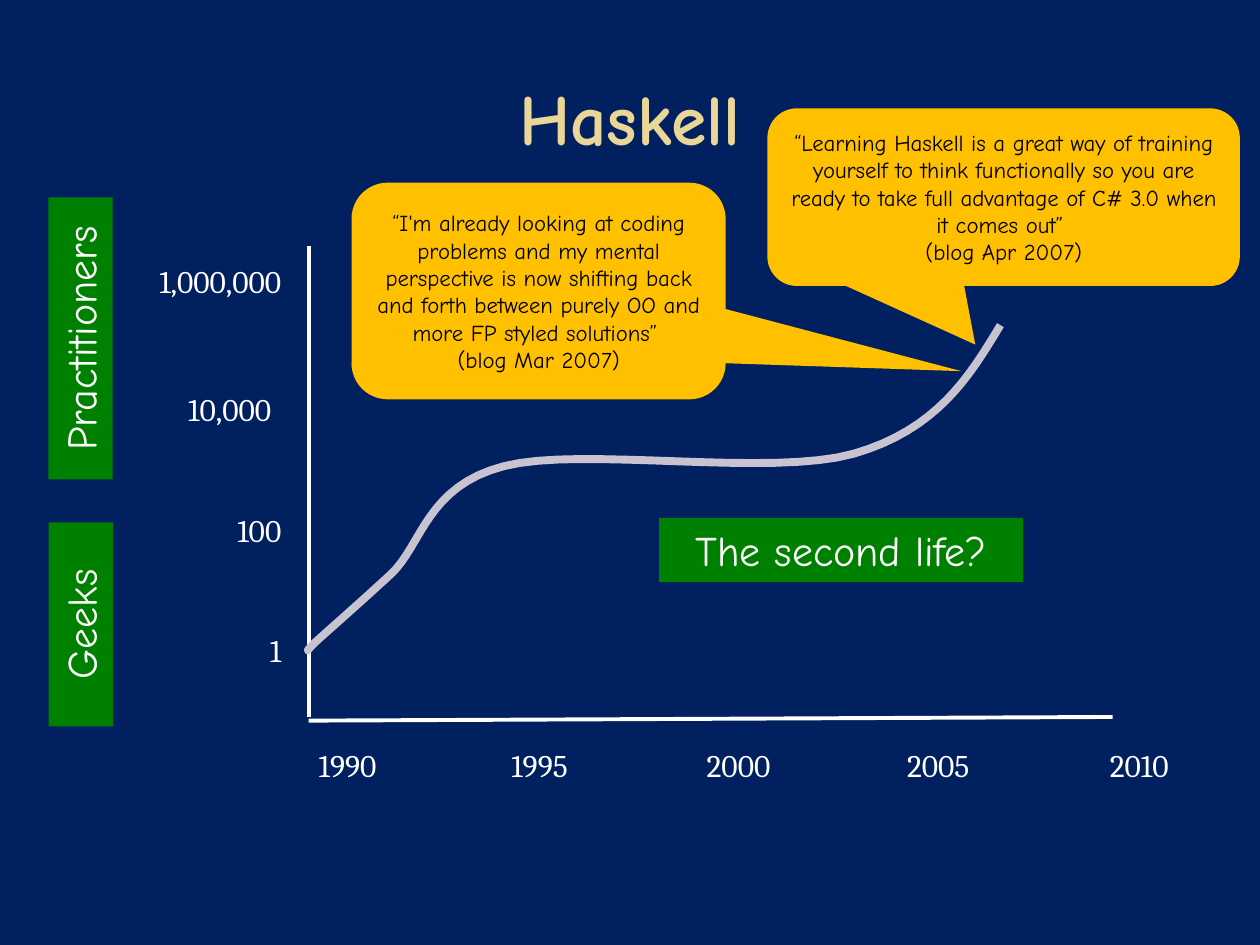
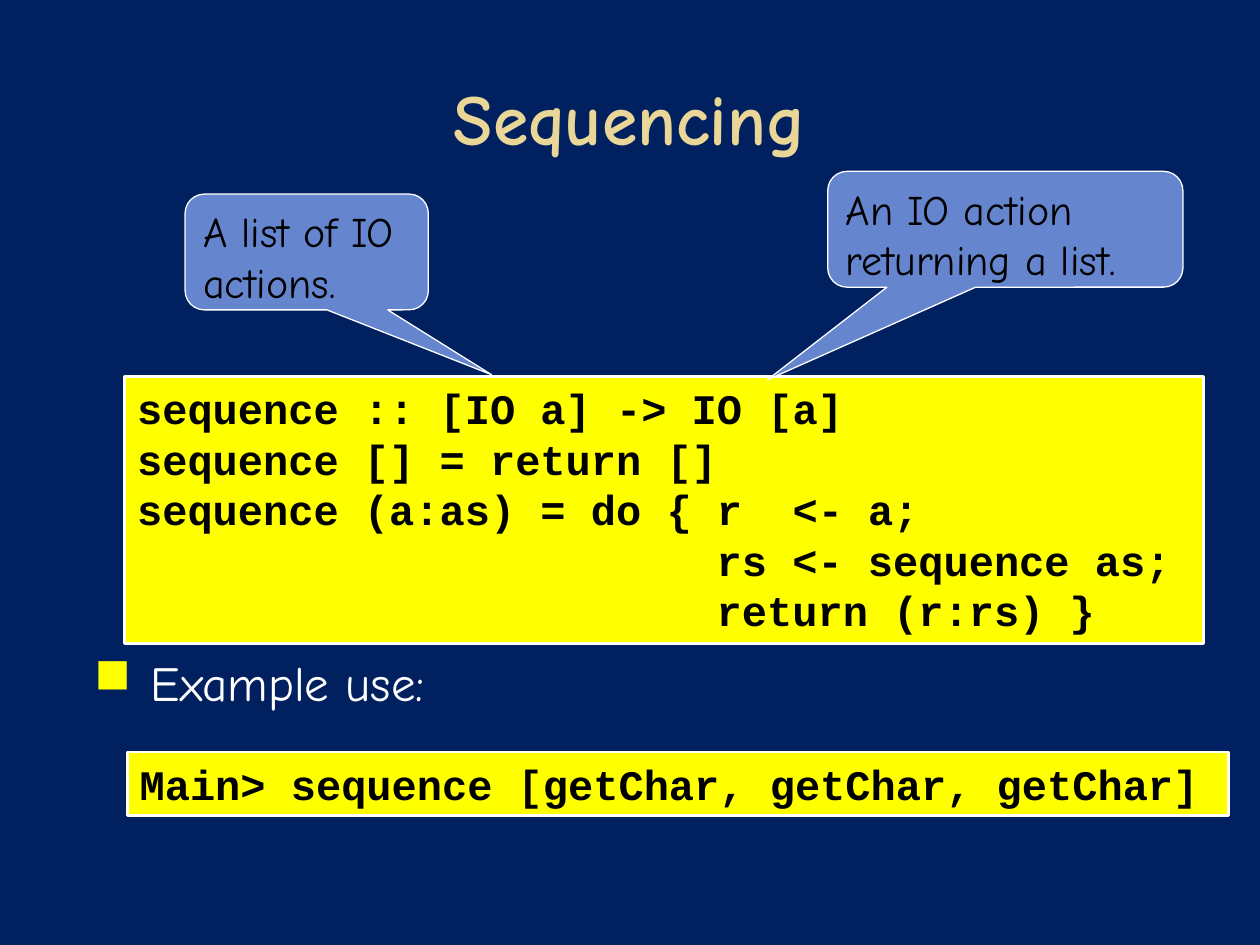
from lxml import etree
from pptx import Presentation
from pptx.dml.color import RGBColor
from pptx.enum.shapes import MSO_CONNECTOR as Connector, MSO_SHAPE as Shape
from pptx.enum.text import MSO_ANCHOR as Anchor, PP_ALIGN as Align
from pptx.oxml.ns import qn
from pptx.util import Pt

NAVY, SAND, WHITE, BLACK = "002060", "EAD696", "FFFFFF", "000000"
GREEN, AMBER, YELLOW = "008000", "FFC000", "FFFF00"
BLUE, LILAC = "6585CF", "C9C2D1"
HAND, SERIF, MONO = "Comic Neue", "Cambria", "Courier New"


def color(value):
    return RGBColor.from_string(value)


def bezier(start, first, second, end, steps=16):
    """Return the points after start on a cubic curve."""
    points = []
    for step in range(1, steps + 1):
        t = step / steps
        weights = ((1 - t) ** 3, 3 * t * (1 - t) ** 2, 3 * t * t * (1 - t), t ** 3)
        corners = (start, first, second, end)
        points.append(tuple(sum(w * c[axis] for w, c in zip(weights, corners))
                            for axis in (0, 1)))
    return points


class Painter:
    """Hold the shared style and the slide being drawn; lengths are in points."""

    def __init__(self):
        self.deck = Presentation()
        self.deck.slide_width, self.deck.slide_height = Pt(720), Pt(540)
        self.slide = None

    def new_slide(self, title):
        self.slide = self.deck.slides.add_slide(self.deck.slide_layouts[6])
        fill = self.slide.background.fill
        fill.solid()
        fill.fore_color.rgb = color(NAVY)
        self.text(36, 21.6, 648, 90, title, size=41, ink=SAND, bold=True,
                  align=Align.CENTER, anchor=Anchor.MIDDLE)

    def set_text(self, shape, lines, size, font=HAND, ink=WHITE, bold=False,
                 align=Align.LEFT, anchor=Anchor.TOP):
        frame = shape.text_frame
        frame.word_wrap = True
        frame.vertical_anchor = anchor
        for index, line in enumerate([lines] if isinstance(lines, str) else lines):
            para = frame.add_paragraph() if index else frame.paragraphs[0]
            para.text = line
            para.alignment = align
            para.font.name, para.font.size, para.font.bold = font, Pt(size), bold
            para.font.color.rgb = color(ink)
        return frame.paragraphs

    def text(self, left, top, width, height, lines, **style):
        box = self.slide.shapes.add_textbox(Pt(left), Pt(top), Pt(width), Pt(height))
        return self.set_text(box, lines, **style)

    def shape(self, kind, left, top, width, height, fill, line=None, line_width=1.5):
        shape = self.slide.shapes.add_shape(kind, Pt(left), Pt(top), Pt(width), Pt(height))
        shape.shadow.inherit = False
        shape.fill.solid()
        shape.fill.fore_color.rgb = color(fill)
        if line:
            shape.line.color.rgb = color(line)
            shape.line.width = Pt(line_width)
        else:
            shape.line.fill.background()
        return shape

    def label(self, left, top, width, text, rotation=0):
        box = self.shape(Shape.RECTANGLE, left, top, width, 36.7, GREEN)
        box.rotation = rotation
        self.set_text(box, text, size=24, align=Align.CENTER)

    def callout(self, left, top, width, height, tip, text, fill, line=None, **style):
        """Draw a speech bubble; tip is its offset from the centre as shares of the size."""
        bubble = self.shape(Shape.ROUNDED_RECTANGULAR_CALLOUT, left, top, width, height,
                            fill, line, 0.75)
        bubble.adjustments[0], bubble.adjustments[1] = tip
        self.set_text(bubble, text, ink=BLACK, **style)

    def code(self, left, top, width, height, lines):
        box = self.shape(Shape.RECTANGLE, left, top, width, height, YELLOW, WHITE)
        return self.set_text(box, lines, size=24, font=MONO, ink=BLACK, bold=True)

    def bullet(self, left, top, width, height, text):
        para = self.text(left, top, width, height, text, size=28)[0]
        props = para._p.get_or_add_pPr()
        self.indent(para, 43.2, -32.4)
        tint = etree.SubElement(props, qn("a:buClr"))
        etree.SubElement(tint, qn("a:srgbClr"), val=YELLOW)
        etree.SubElement(props, qn("a:buChar"), char="■")
        # Bullet properties come before the default run properties.
        props.append(props.find(qn("a:defRPr")))

    def indent(self, para, margin, first=0):
        props = para._p.get_or_add_pPr()
        props.set("marL", str(Pt(margin)))
        props.set("indent", str(Pt(first)))

    def axis(self, x1, y1, x2, y2):
        line = self.slide.shapes.add_connector(Connector.STRAIGHT, Pt(x1), Pt(y1), Pt(x2), Pt(y2))
        line.line.color.rgb = color(WHITE)
        line.line.width = Pt(2.25)
        etree.SubElement(line._element.spPr, qn("a:effectLst"))

    def curve(self, start, segments):
        points = [start]
        for segment in segments:
            points += bezier(points[-1], *segment)
        (x, y), *rest = [(Pt(px), Pt(py)) for px, py in points]
        builder = self.slide.shapes.build_freeform(x, y)
        builder.add_line_segments(rest, close=False)
        shape = builder.convert_to_shape()
        shape.shadow.inherit = False
        shape.fill.background()
        shape.line.color.rgb = color(LILAC)
        shape.line.width = Pt(4.5)


def draw_haskell(painter):
    painter.new_slide("Haskell")
    painter.axis(176.4, 140.4, 176.4, 409.7)
    painter.axis(635.8, 409.7, 176.4, 411.8)
    for count, right, top in (("1,000,000", 167.8, 146.2), ("10,000", 162, 219.6),
                              ("100", 167.8, 288.7), ("1", 167.8, 357.1)):
        painter.text(right - 140, top, 140, 28.8, count, size=18, font=SERIF,
                     align=Align.RIGHT)
    for year, left in (("1990", 175), ("1995", 285.1), ("2000", 396.7),
                       ("2005", 511.2), ("2010", 627.1)):
        painter.text(left, 422.6, 62, 28.8, year, size=18, font=SERIF)
    painter.curve((176.4, 371.5), (
        ((174.2, 373), (180, 367.2), (180, 367.2)),
        ((187.9, 360), (205.2, 344.9), (223.2, 328.3)),
        ((241.2, 311.8), (243.4, 277.9), (288, 266.4)),
        ((331.9, 254.9), (440.6, 272.9), (488.2, 259.2)),
        ((535, 245.5), (553.7, 216), (571.7, 185.8))))
    painter.label(376.6, 295.9, 208.1, "The second life?")
    quote = dict(fill=AMBER, size=13, align=Align.CENTER, anchor=Anchor.MIDDLE)
    painter.callout(438.5, 61.9, 270, 101.5, (-0.06, 0.83),
                    "“Learning Haskell is a great way of training yourself to think "
                    "functionally so you are ready to take full advantage of C# 3.0 "
                    "when it comes out” \v(blog Apr 2007)", **quote)
    painter.callout(200.9, 104.4, 213.8, 123.8, (1.13, 0.37),
                    "“I'm already looking at coding problems and my mental perspective "
                    "is now shifting back and forth between purely OO and more FP "
                    "styled solutions” \v(blog Mar 2007)", **quote)
    painter.label(-12.2, 338.4, 116.6, "Geeks", rotation=270)
    painter.label(-34.6, 175, 161.3, "Practitioners", rotation=270)


def draw_sequencing(painter):
    painter.new_slide("Sequencing")
    painter.bullet(36, 369.5, 648, 42, "Example use:")
    lines = painter.code(71.3, 215.3, 616.3, 152.6, (
        "sequence :: [IO a] -> IO [a]",
        "sequence [] = return []",
        "sequence (a:as) = do { r  <- a;",
        "rs <- sequence as;",
        "return (r:rs) }"))
    for para in lines[3:]:
        painter.indent(para, 23 * 14.4)  # 23 characters of 24 pt Courier
    painter.code(72.7, 429.8, 629.3, 36.4, "Main> sequence [getChar, getChar, getChar]")
    note = dict(fill=BLUE, line=WHITE, size=24)
    painter.callout(105.8, 110.9, 139, 66.2, (0.76, 1.06), "A list of IO actions.", **note)
    painter.callout(473, 97.9, 203, 66.2, (-0.67, 1.3), "An IO action returning a list.", **note)


def main():
    painter = Painter()
    draw_haskell(painter)
    draw_sequencing(painter)
    painter.deck.save("out.pptx")


if __name__ == "__main__":
    main()
